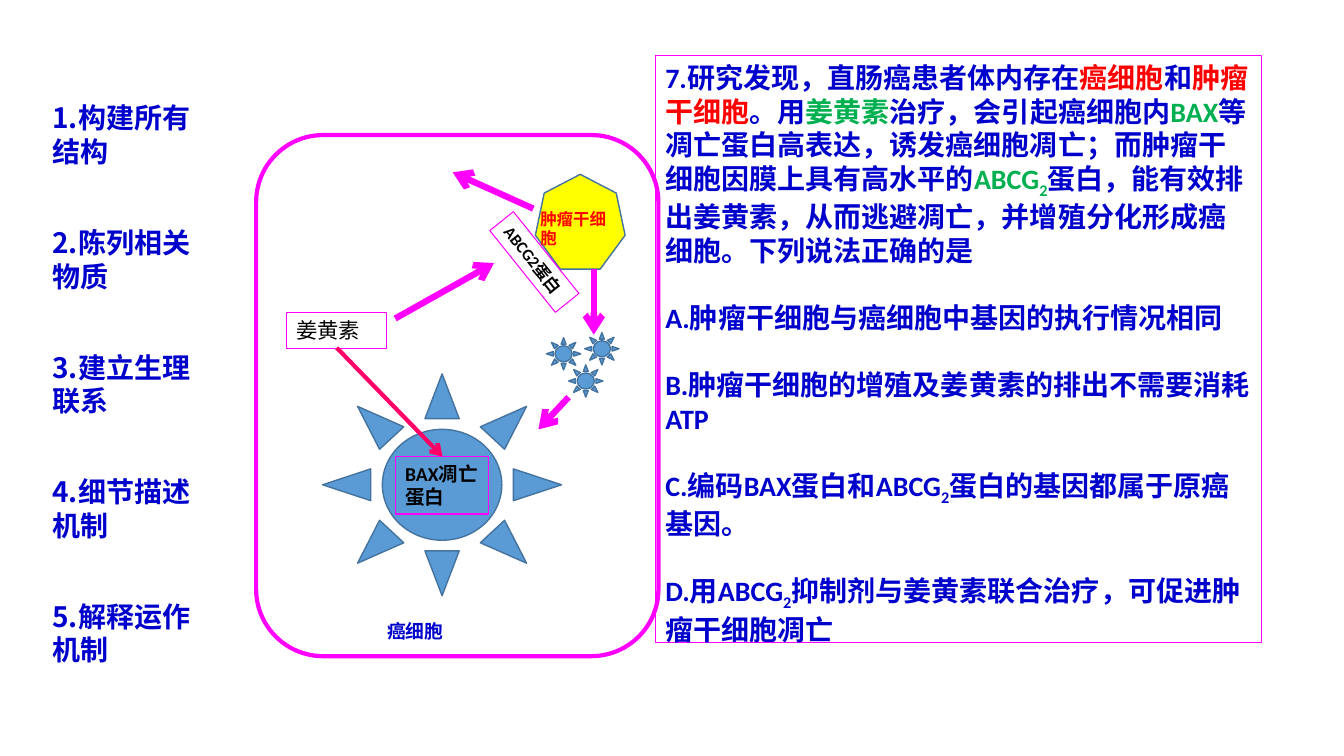
from dataclasses import dataclass

from lxml import etree
from pptx import Presentation, util as u
from pptx.dml.color import RGBColor
from pptx.enum import shapes, text as t
from pptx.oxml.ns import qn

SCALE = 9144  # EMU per px, 100 px to the inch


@dataclass(frozen=True)
class Theme:
    blue: str = "0000CC"
    red: str = "FF0000"
    green: str = "00B050"
    black: str = "000000"
    pink: str = "FF00FF"
    rose: str = "FF0066"
    sun: str = "5B9BD5"
    edge: str = "43739E"
    yellow: str = "FFFF00"
    font: str = "Calibri"
    plain: str = "Arial"
    cjk: str = "Noto Sans CJK JP"
    body: float = 20
    drug: float = 15.2
    bax: float = 14
    cell: float = 13.4
    small: float = 11.8


T = Theme()
SHAPE = shapes.MSO_SHAPE

STEPS = ["1.构建所有结构", "2.陈列相关物质", "3.建立生理联系",
         "4.细节描述机制", "5.解释运作机制"]

RED, GREEN, SUB = {"color": T.red}, {"color": T.green}, {"sub": True}
QUIZ = [
    [("7.研究发现，直肠癌患者体内存在", {}), ("癌细胞", RED), ("和", {}),
     ("肿瘤干细胞", RED), ("。用", {}), ("姜黄素", GREEN),
     ("治疗，会引起癌细胞内", {}), ("BAX", GREEN),
     ("等凋亡蛋白高表达，诱发癌细胞凋亡；而肿瘤干细胞因膜上具有高水平的", {}),
     ("ABCG", GREEN), ("2", GREEN | SUB),
     ("蛋白，能有效排出姜黄素，从而逃避凋亡，并增殖分化形成癌细胞。下列说法正确的是", {})],
    [("A.肿瘤干细胞与癌细胞中基因的执行情况相同", {})],
    [("B.肿瘤干细胞的增殖及姜黄素的排出不需要消耗ATP", {})],
    [("C.编码BAX蛋白和ABCG", {}), ("2", SUB), ("蛋白的基因都属于原癌基因。", {})],
    [("D.用ABCG", {}), ("2", SUB), ("抑制剂与姜黄素联合治疗，可促进肿瘤干细胞凋亡", {})],
]


def px(*vals):
    return [u.Emu(v * SCALE) for v in vals]


def write(para, text, size=T.body, color=T.blue, font=T.font, bold=True, sub=False):
    run = para.add_run()
    run.text = text
    f = run.font
    f.size, f.bold, f.name = u.Pt(size), bold, font
    f.color.rgb = RGBColor.from_string(color)
    if sub:
        run._r.get_or_add_rPr().set("baseline", "-25000")


def paras(frame, count, gap):
    """Yield left-aligned paragraphs, with a gap in points between them."""
    for i in range(count):
        para = frame.add_paragraph() if i else frame.paragraphs[0]
        para.alignment = t.PP_ALIGN.LEFT
        para.space_before = u.Pt(gap if i else 0)
        yield para


def setup(frame):
    frame.word_wrap = True
    frame.vertical_anchor = t.MSO_ANCHOR.TOP
    frame.auto_size = t.MSO_AUTO_SIZE.NONE


def shape(slide, kind, at, fill=None, line=T.edge, width=1):
    item = slide.shapes.add_shape(kind, *px(*at))
    item.shadow.inherit = False
    if fill:
        item.fill.solid()
        item.fill.fore_color.rgb = RGBColor.from_string(fill)
    else:
        item.fill.background()
    item.line.color.rgb = RGBColor.from_string(line)
    item.line.width = u.Pt(width)
    return item


def label(slide, text, at, boxed=True, turn=0, **style):
    if boxed:
        item = shape(slide, SHAPE.RECTANGLE, at, line=T.pink, width=0.75)
    else:
        item = slide.shapes.add_textbox(*px(*at))
    item.rotation = turn
    setup(item.text_frame)
    for para in paras(item.text_frame, 1, 0):
        write(para, text, **style)


def arrow(slide, ends, color=T.pink, width=4.5):
    item = slide.shapes.add_connector(shapes.MSO_CONNECTOR.STRAIGHT, *px(*ends))
    item.line.color.rgb = RGBColor.from_string(color)
    item.line.width = u.Pt(width)
    etree.SubElement(item.line._get_or_add_ln(), qn("a:tailEnd"), type="arrow")
    etree.SubElement(item._element.spPr, qn("a:effectLst"))


def steps(slide):
    title, body = slide.shapes.title, slide.placeholders[1]
    title._element.getparent().remove(title._element)
    body.left, body.top, body.width, body.height = px(42, 95, 171, 596)
    setup(body.text_frame)
    for para, step in zip(paras(body.text_frame, len(STEPS), 41), STEPS):
        para.line_spacing = u.Pt(24)
        props = para._p.get_or_add_pPr()
        props.set("marL", "0")
        props.set("indent", "0")
        etree.SubElement(props, qn("a:buNone"))
        write(para, step, font=T.cjk)


def quiz(slide):
    box = shape(slide, SHAPE.RECTANGLE, (650, 55, 601, 582), line=T.pink, width=0.75)
    setup(box.text_frame)
    for para, runs in zip(paras(box.text_frame, len(QUIZ), 24), QUIZ):
        for text, style in runs:
            write(para, text, **style)


def cells(slide):
    shape(slide, SHAPE.ROUNDED_RECTANGLE, (254, 134, 399, 517), line=T.pink, width=3)
    shape(slide, SHAPE.SUN, (320, 371, 237, 220), T.sun)
    for left, top in ((580, 330), (542, 335), (564, 362)):
        shape(slide, SHAPE.SUN, (left, top, 34, 32), T.sun)
    shape(slide, SHAPE.HEPTAGON, (531, 173, 89, 94), T.yellow)
    label(slide, "癌细胞", (374, 610, 129, 33), boxed=False, size=T.cell, font=T.plain)
    label(slide, "肿瘤干细胞", (526, 202, 99, 50), boxed=False, size=T.small, color=T.red)
    label(slide, "姜黄素", (284, 310, 99, 36), size=T.drug, color=T.black, bold=False)
    label(slide, "BAX凋亡蛋白", (392, 453, 93, 57), size=T.bax, color=T.black)
    label(slide, "ABCG2蛋白", (478, 245, 104, 30), turn=51.3, size=T.small, color=T.black)


def arrows(slide):
    arrow(slide, (334, 345, 439, 453), T.rose, 3)
    for ends in ((392, 316, 490, 261), (529, 207, 449, 171),
                 (589, 267, 589, 332), (564, 394, 534, 426)):
        arrow(slide, ends)


def main():
    deck = Presentation()
    deck.slide_width, deck.slide_height = px(1333, 750)
    slide = deck.slides.add_slide(deck.slide_layouts[1])
    steps(slide)
    quiz(slide)
    cells(slide)
    arrows(slide)
    deck.save("out.pptx")


if __name__ == "__main__":
    main()
